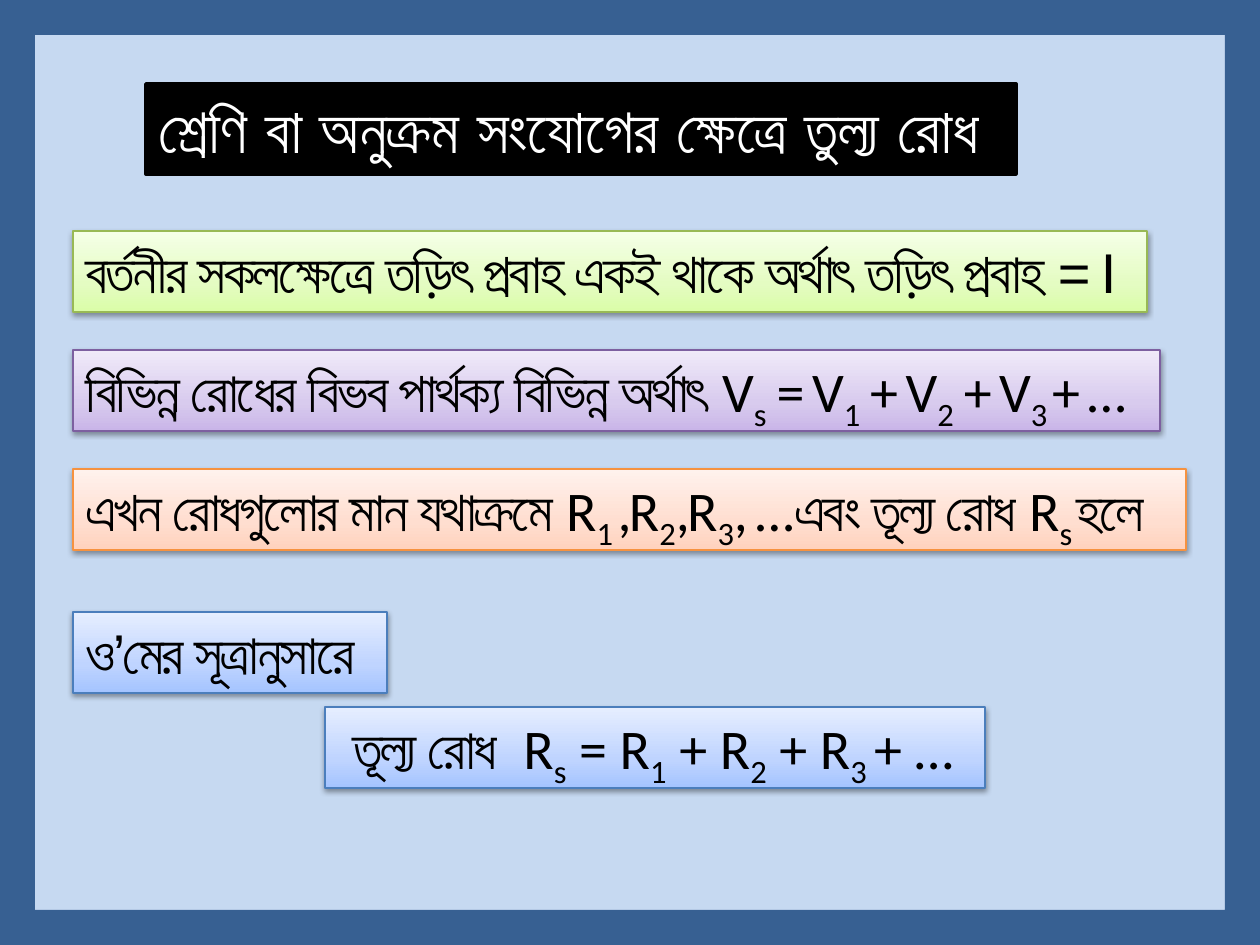
from copy import deepcopy

from lxml.etree import SubElement
from pptx import Presentation
from pptx.dml.color import RGBColor
from pptx.enum.shapes import MSO_SHAPE
from pptx.enum.text import MSO_ANCHOR, MSO_AUTO_SIZE, PP_ALIGN
from pptx.oxml import parse_xml
from pptx.oxml.ns import nsdecls, qn
from pptx.util import Emu, Pt

BLACK = RGBColor(0x00, 0x00, 0x00)
WHITE = RGBColor(0xFF, 0xFF, 0xFF)
PALE_BLUE = RGBColor(0xC6, 0xD9, 0xF1)
FRAME_BLUE = RGBColor(0x37, 0x60, 0x92)
GREEN_LINE = RGBColor(0x98, 0xB9, 0x55)
GREENS = [RGBColor(0xDA, 0xFD, 0xA7), RGBColor(0xE4, 0xFC, 0xC2), RGBColor(0xF5, 0xFF, 0xE7)]
PURPLE_LINE = RGBColor(0x7D, 0x60, 0xA0)
PURPLES = [RGBColor(0xC9, 0xB5, 0xE8), RGBColor(0xD8, 0xCB, 0xEE), RGBColor(0xF0, 0xEA, 0xF9)]
ORANGE_LINE = RGBColor(0xF6, 0x92, 0x40)
ORANGES = [RGBColor(0xFF, 0xD2, 0xBD), RGBColor(0xFF, 0xDE, 0xD0), RGBColor(0xFF, 0xF2, 0xED)]
BLUE_LINE = RGBColor(0x4B, 0x7E, 0xBC)
BLUES = [RGBColor(0xA4, 0xC4, 0xFF), RGBColor(0xBF, 0xD4, 0xFF), RGBColor(0xE6, 0xEE, 0xFF)]

BANGLA, LATIN = "Arial", "Calibri"
TIGHT = -150
STOPS = (0, 0.35, 1)
SHADOW = (
    f'<a:effectLst {nsdecls("a")}><a:outerShdw blurRad="40000" dist="20000" dir="5400000" '
    'rotWithShape="0"><a:srgbClr val="000000"><a:alpha val="38000"/></a:srgbClr>'
    "</a:outerShdw></a:effectLst>"
)


def px(n):
    """Turn pixels into EMU."""
    return Emu(round(n * 914400 / 126))


def add_run(p, text, font, size, color, spacing=0, subscript=False):
    """Add one formatted run to a paragraph."""
    r = p.add_run()
    r.text = text
    r.font.size = Pt(size)
    r.font.color.rgb = color
    r.font.name = font
    rPr = r._r.get_or_add_rPr()
    SubElement(rPr, qn("a:cs")).set("typeface", font)
    if spacing:
        rPr.set("spc", str(spacing))
    if subscript:
        rPr.set("baseline", "-25000")


def place(sp, box):
    """Move a shape to a pixel box."""
    sp.left, sp.top, sp.width, sp.height = map(px, box)


def set_frame(tf):
    """Set plain top-left text layout."""
    tf.word_wrap = True
    tf.auto_size = MSO_AUTO_SIZE.NONE
    tf.vertical_anchor = MSO_ANCHOR.TOP


def add_title(s, box, text):
    """Format the title placeholder as a black banner."""
    sp = s.shapes.title
    place(sp, box)
    sp.fill.solid()
    sp.fill.fore_color.rgb = BLACK
    sp.line.color.rgb = BLACK
    sp.line.width = Pt(2)
    set_frame(sp.text_frame)
    p = sp.text_frame.paragraphs[0]
    p.alignment = PP_ALIGN.LEFT
    add_run(p, text, BANGLA, 36, WHITE)


def fill_gradient(sp, colors):
    """Fill a shape with a three-stop gradient rising from the bottom."""
    sp.fill.gradient()
    sp.fill.gradient_angle = 90
    last = sp._element.spPr.findall(".//" + qn("a:gs"))[-1]
    last.addprevious(deepcopy(last))
    for stop, position, color in zip(sp.fill.gradient_stops, STOPS, colors):
        stop.position = position
        stop.color.rgb = color


def add_statement(s, box, colors, line, parts):
    """Add a shaded box whose parts alternate normal and subscript pieces."""
    sp = s.shapes.add_textbox(*map(px, box))
    fill_gradient(sp, colors)
    sp.line.color.rgb = line
    sp.line.width = Pt(0.75)
    sp._element.spPr.append(parse_xml(SHADOW))
    set_frame(sp.text_frame)
    p = sp.text_frame.paragraphs[0]
    for font, spacing, pieces in parts:
        for i, piece in enumerate(pieces):
            add_run(p, piece, font, 32, BLACK, spacing, i % 2 == 1)


def add_border(s, box):
    """Add the frame around the slide."""
    sp = s.shapes.add_shape(MSO_SHAPE.FRAME, *map(px, box))
    sp.adjustments[0] = 0.037
    sp.fill.solid()
    sp.fill.fore_color.rgb = FRAME_BLUE
    sp.line.fill.background()
    sp.shadow.inherit = False


def main():
    """Build the slide on equivalent resistance in series."""
    prs = Presentation()
    prs.slide_width, prs.slide_height = px(1260), px(945)
    s = prs.slides.add_slide(prs.slide_layouts[5])
    s.background.fill.solid()
    s.background.fill.fore_color.rgb = PALE_BLUE

    add_title(s, (146, 84, 870, 90), "শ্রেণি বা অনুক্রম সংযোগের ক্ষেত্রে তুল্য রোধ")
    statements = [
        ((73, 231, 1074, 81), GREENS, GREEN_LINE, [
            (BANGLA, TIGHT, ["বর্তনীর সকলক্ষেত্রে তড়িৎ প্রবাহ একই থাকে অর্থাৎ তড়িৎ প্রবাহ = I"])]),
        ((73, 350, 1087, 81), PURPLES, PURPLE_LINE, [
            (BANGLA, TIGHT, ["বিভিন্ন রোধের বিভব পার্থক্য বিভিন্ন অর্থাৎ "]),
            (LATIN, TIGHT, ["V", "s", " = V", "1", " + V", "2", " + V", "3 ", "+ …"])]),
        ((73, 469, 1113, 81), ORANGES, ORANGE_LINE, [
            (BANGLA, TIGHT, ["এখন রোধগুলোর মান যথাক্রমে"]),
            (LATIN, TIGHT, [" R", "1 ", ",R", "2", ",R", "3", ", …"]),
            (BANGLA, TIGHT, ["এবং তূল্য রোধ "]),
            (LATIN, TIGHT, ["R", "s "]),
            (BANGLA, TIGHT, ["হলে"])]),
        ((73, 612, 314, 81), BLUES, BLUE_LINE, [
            (BANGLA, TIGHT, ["ও’মের সূত্রানুসারে"])]),
        ((325, 707, 660, 81), BLUES, BLUE_LINE, [
            (BANGLA, 0, [" "]),
            (BANGLA, TIGHT, ["তূল্য রোধ  "]),
            (LATIN, 0, ["R", "s", " = R", "1", " + R", "2", " + R", "3 ", "+ …"])]),
    ]
    for box, colors, line, parts in statements:
        add_statement(s, box, colors, line, parts)
    add_border(s, (0, 0, 1260, 945))
    prs.save("out.pptx")


if __name__ == "__main__":
    main()
